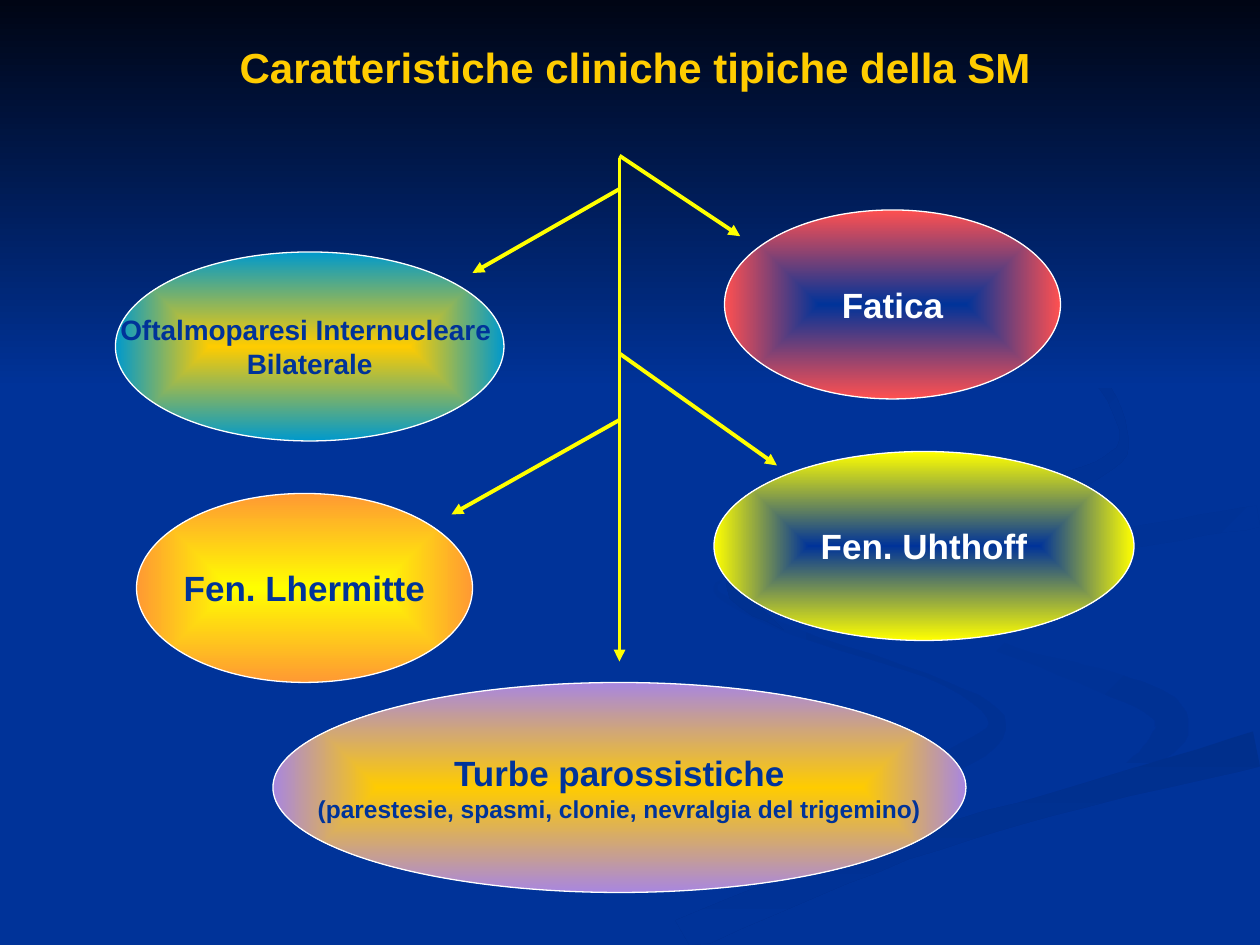
"""Build a slide on the typical clinical features of MS."""
import dataclasses
import math

import lxml.etree
import pptx
import pptx.dml.color
import pptx.enum.shapes
import pptx.enum.text
import pptx.oxml
import pptx.oxml.ns
import pptx.util

Pt = pptx.util.Pt

PAGE_WIDTH, PAGE_HEIGHT = 720, 540
FADE_HEIGHT = 222
STEPS_PER_SPAN = 6
TRUNK_X, TRUNK_TOP, TRUNK_BOTTOM = 354, 90, 378


@dataclasses.dataclass(frozen=True)
class Theme:
    font: str = "Arial"
    title_size: int = 24
    label_size: int = 20
    long_size: int = 16
    detail_size: int = 14
    blue: str = "003399"
    night: str = "000514"
    shade: str = "003193"
    deep: str = "002F8C"
    gold: str = "FFCC00"
    yellow: str = "FFFF00"
    white: str = "FFFFFF"
    cyan: str = "0099CC"
    orange: str = "FF9933"
    violet: str = "A886E0"
    red: str = "FF5050"


THEME = Theme()


@dataclasses.dataclass(frozen=True)
class Swirl:
    """A brush stroke: spine stations are (x, y, stroke width)."""
    spine: tuple
    first: str
    last: str
    angle: int


@dataclasses.dataclass(frozen=True)
class Feature:
    """An oval with a glowing centre; lines are (text, size)."""
    area: tuple
    center: str
    edge: str
    ink: str
    lines: tuple


left_curl = Swirl(
    ((414, 330, 0), (411, 340, 3), (454, 361, 4), (541, 391, 3), (570, 415, 11),
     (538, 437, 14), (478, 451, 14), (359, 485, 19), (238, 538, 32)),
    THEME.blue, THEME.shade, 0)
right_curl = Swirl(
    ((521, 334, 0), (532, 353, 5), (607, 381, 10), (658, 400, 16), (670, 415, 19),
     (661, 428, 14), (644, 436, 0)),
    THEME.blue, THEME.shade, 45)
lower_band = Swirl(
    ((719, 428, 20), (600, 460, 13), (500, 490, 16), (390, 535, 20)),
    THEME.deep, THEME.blue, 90)
hidden_band = Swirl(
    ((719, 284, 10), (610, 304, 12), (543, 328, 30), (585, 361, 20), (640, 375, 18),
     (719, 402, 30)),
    THEME.blue, THEME.blue, 0)
right_band = Swirl(
    ((719, 295, 13), (648, 307, 12), (595, 319, 14), (572, 333, 16), (595, 357, 0)),
    THEME.shade, THEME.blue, 45)
upper_curl = Swirl(
    ((549, 168, 0), (619, 208, 6), (642, 246, 5), (628, 268, 10), (560, 291, 15),
     (460, 309, 9), (421, 335, 12), (448, 360, 0)),
    THEME.deep, THEME.blue, 45)
SWIRLS = (left_curl, right_curl, lower_band, hidden_band, right_band, upper_curl)

eye_palsy = Feature(
    (66, 144, 222, 108), THEME.gold, THEME.cyan, THEME.blue,
    (("Oftalmoparesi Internucleare ", THEME.long_size), ("Bilaterale", THEME.long_size)))
lhermitte = Feature(
    (78, 282, 192, 108), THEME.yellow, THEME.orange, THEME.blue,
    (("Fen. Lhermitte", THEME.label_size),))
paroxysms = Feature(
    (156, 390, 396, 120), THEME.gold, THEME.violet, THEME.blue,
    (("Turbe parossistiche", THEME.label_size),
     ("(parestesie, spasmi, clonie, nevralgia del trigemino)", THEME.detail_size)))
uhthoff = Feature(
    (408, 258, 240, 108), THEME.blue, THEME.yellow, THEME.white,
    (("Fen. Uhthoff", THEME.label_size),))
fatigue = Feature(
    (414, 120, 192, 108), THEME.blue, THEME.red, THEME.white,
    (("Fatica", THEME.label_size),))
FEATURES = (eye_palsy, lhermitte, paroxysms, uhthoff, fatigue)

BRANCHES = {
    "eye palsy": (108, (270, 156)),
    "trunk": (TRUNK_TOP, (TRUNK_X, TRUNK_BOTTOM)),
    "lhermitte": (240, (258, 294)),
    "uhthoff": (202, (444, 266)),
    "fatigue": (89, (423, 135)),
}


def color(value):
    return pptx.dml.color.RGBColor.from_string(value)


def catmull_rom(before, start, end, after, t):
    return (start + (end - before) * t / 2
            + (2 * before - 5 * start + 4 * end - after) * t ** 2 / 2
            + (3 * start - before - 3 * end + after) * t ** 3 / 2)


def smooth(spine):
    padded = (spine[0], *spine, spine[-1])
    stations = []
    for four in zip(padded, padded[1:], padded[2:], padded[3:]):
        for step in range(STEPS_PER_SPAN):
            stations.append([catmull_rom(*values, step / STEPS_PER_SPAN) for values in zip(*four)])
    return stations + [spine[-1]]


def stroke_outline(spine):
    stations = smooth(spine)
    sides = ([], [])
    for index, (x, y, width) in enumerate(stations):
        before = stations[max(index - 1, 0)]
        after = stations[min(index + 1, len(stations) - 1)]
        heading = math.atan2(after[1] - before[1], after[0] - before[0])
        for side, sign in zip(sides, (1, -1)):
            reach = sign * max(width, 0) / 2
            side.append((min(x - reach * math.sin(heading), PAGE_WIDTH),
                         min(y + reach * math.cos(heading), PAGE_HEIGHT)))
    return sides[0] + sides[1][::-1]


def blend(shape, first, last, angle=0):
    shape.fill.gradient()
    shape.fill.gradient_angle = -angle % 360
    for stop, value in zip(shape.fill.gradient_stops, (first, last)):
        stop.color.rgb = color(value)


def blend_from_center(shape, center, edge):
    blend(shape, center, edge)
    linear = shape.element.spPr.find(".//" + pptx.oxml.ns.qn("a:lin"))
    radial = pptx.oxml.parse_xml(
        f'<a:path {pptx.oxml.ns.nsdecls("a")} path="shape">'
        '<a:fillToRect l="50000" t="50000" r="50000" b="50000"/></a:path>')
    linear.getparent().replace(linear, radial)


def write(para, text, size, ink):
    para.text = text
    para.alignment = pptx.enum.text.PP_ALIGN.CENTER
    para.font.name = THEME.font
    para.font.size = Pt(size)
    para.font.bold = True
    para.font.color.rgb = color(ink)


def add_swirl(page, swirl):
    outline = stroke_outline(swirl.spine)
    builder = page.shapes.build_freeform(*outline[0], scale=Pt(1))
    builder.add_line_segments(outline[1:], close=True)
    stroke = builder.convert_to_shape()
    stroke.shadow.inherit = False
    stroke.line.fill.background()
    blend(stroke, swirl.first, swirl.last, swirl.angle)


def add_top_fade(page):
    fade = page.shapes.add_shape(
        pptx.enum.shapes.MSO_SHAPE.RECTANGLE, 0, 0, Pt(PAGE_WIDTH), Pt(FADE_HEIGHT))
    fade.shadow.inherit = False
    fade.line.fill.background()
    blend(fade, THEME.night, THEME.blue, 90)


def place_title(page, text):
    title = page.shapes.title
    title.element.getparent().append(title.element)
    title.left, title.top, title.width, title.height = map(Pt, (120, 20, 486, 36))
    title.text_frame.word_wrap = False
    title.text_frame.vertical_anchor = pptx.enum.text.MSO_ANCHOR.MIDDLE
    write(title.text_frame.paragraphs[0], text, THEME.title_size, THEME.gold)


def add_feature(page, feature):
    oval = page.shapes.add_shape(pptx.enum.shapes.MSO_SHAPE.OVAL, *map(Pt, feature.area))
    oval.shadow.inherit = False
    blend_from_center(oval, feature.center, feature.edge)
    oval.line.color.rgb = color(THEME.white)
    oval.line.width = Pt(0.75)
    frame = oval.text_frame
    frame.word_wrap = False
    frame.vertical_anchor = pptx.enum.text.MSO_ANCHOR.MIDDLE
    for index, (text, size) in enumerate(feature.lines):
        para = frame.add_paragraph() if index else frame.paragraphs[0]
        write(para, text, size, feature.ink)


def add_branch(page, start_y, tip):
    arrow = page.shapes.add_connector(
        pptx.enum.shapes.MSO_CONNECTOR.STRAIGHT, *map(Pt, (TRUNK_X, start_y, *tip)))
    arrow.line.color.rgb = color(THEME.yellow)
    arrow.line.width = Pt(2.25)
    outline = arrow.element.spPr.find(pptx.oxml.ns.qn("a:ln"))
    lxml.etree.SubElement(outline, pptx.oxml.ns.qn("a:tailEnd"), type="triangle")
    lxml.etree.SubElement(arrow.element.spPr, pptx.oxml.ns.qn("a:effectLst"))


def main():
    deck = pptx.Presentation()
    deck.slide_width, deck.slide_height = Pt(PAGE_WIDTH), Pt(PAGE_HEIGHT)
    page = deck.slides.add_slide(deck.slide_layouts[5])
    page.background.fill.solid()
    page.background.fill.fore_color.rgb = color(THEME.blue)
    for swirl in SWIRLS:
        add_swirl(page, swirl)
    add_top_fade(page)
    place_title(page, "Caratteristiche cliniche tipiche della SM")
    for feature in FEATURES:
        add_feature(page, feature)
    for start_y, tip in BRANCHES.values():
        add_branch(page, start_y, tip)
    deck.save("out.pptx")


if __name__ == "__main__":
    main()
